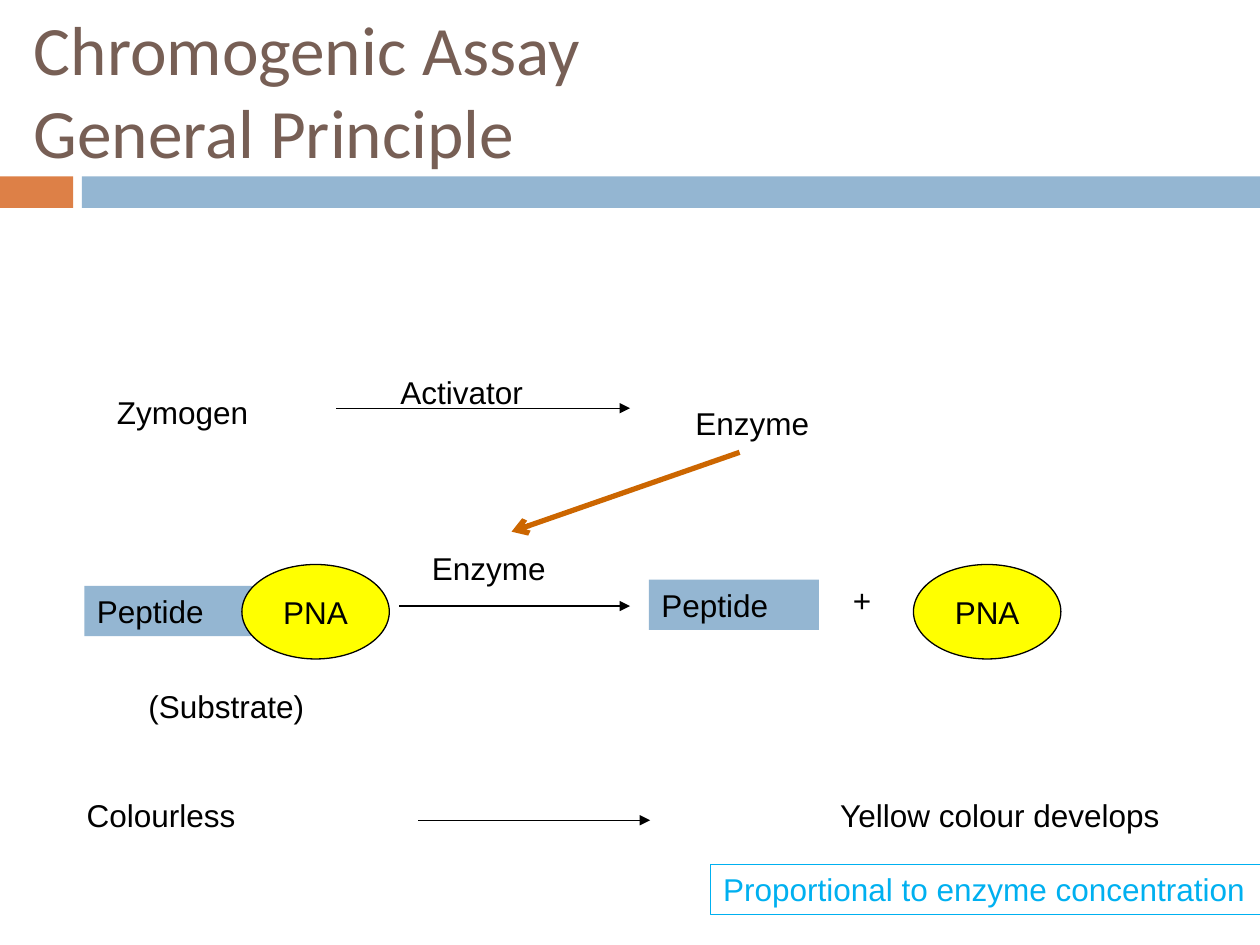
import pptx
import pptx.util
import pptx.dml.color
import pptx.enum.shapes
import pptx.enum.text
import pptx.oxml
import pptx.oxml.ns

Inches = pptx.util.Inches
Shape = pptx.enum.shapes.MSO_SHAPE
Anchor = pptx.enum.text.MSO_ANCHOR
Align = pptx.enum.text.PP_ALIGN

COLORS = {
    "black": "000000",
    "brown": "775F55",
    "orange": "DD8047",
    "blue": "94B6D2",
    "yellow": "FFFF00",
    "rust": "CC6600",
    "cyan": "00B0F0",
}


def color(name):
    return pptx.dml.color.RGBColor.from_string(COLORS[name])


def write(shape, text, hue="black", size=18, font="Arial", wrap=True,
          anchor=Anchor.TOP, align=Align.LEFT):
    frame = shape.text_frame
    frame.word_wrap = wrap
    frame.vertical_anchor = anchor
    para = frame.paragraphs[0]
    para.text = text
    para.alignment = align
    for run in para.runs:
        run.font.name = font
        run.font.size = pptx.util.Pt(size)
        run.font.color.rgb = color(hue)


def label(slide, text, left, top, width, height=0.4, **style):
    box = slide.shapes.add_textbox(
        Inches(left), Inches(top), Inches(width), Inches(height))
    write(box, text, **style)


def block(slide, kind, left, top, width, height, fill=None, line=None):
    shape = slide.shapes.add_shape(
        kind, Inches(left), Inches(top), Inches(width), Inches(height))
    shape.shadow.inherit = False
    if fill:
        shape.fill.solid()
        shape.fill.fore_color.rgb = color(fill)
    else:
        shape.fill.background()
    if line:
        shape.line.color.rgb = color(line)
        shape.line.width = pptx.util.Pt(0.75)
    else:
        shape.line.fill.background()
    return shape


def peptide(slide, left, top, width):
    shape = block(slide, Shape.RECTANGLE, left, top, width, 0.4, "blue")
    write(shape, "Peptide")


def marker(slide, left):
    shape = block(slide, Shape.OVAL, left, 4.48, 1.17, 0.75,
                  "yellow", "black")
    write(shape, "PNA", wrap=False, anchor=Anchor.MIDDLE,
          align=Align.CENTER)


def arrow(slide, start, end, hue="black", width=0.75, head="triangle"):
    line = slide.shapes.add_connector(
        pptx.enum.shapes.MSO_CONNECTOR.STRAIGHT,
        *(Inches(value) for value in start + end))
    line.line.color.rgb = color(hue)
    line.line.width = pptx.util.Pt(width)
    # Arrowhead, and no shadow
    tip = pptx.oxml.parse_xml(
        f'<a:tailEnd {pptx.oxml.ns.nsdecls("a")} type="{head}"/>')
    line.line._get_or_add_ln().append(tip)
    line._element.spPr.append(pptx.oxml.parse_xml(
        f'<a:effectLst {pptx.oxml.ns.nsdecls("a")}/>'))


def main():
    deck = pptx.Presentation()
    deck.slide_width, deck.slide_height = Inches(10), Inches(7.5)
    slide = deck.slides.add_slide(deck.slide_layouts[6])

    # Title and its band
    block(slide, Shape.RECTANGLE, 0, 1.4, 0.58, 0.25, "orange")
    block(slide, Shape.RECTANGLE, 0.65, 1.4, 9.35, 0.25, "blue")
    label(slide, "Chromogenic Assay\vGeneral Principle", 0.17, 0, 8.66, 1.42,
          hue="brown", size=39.6, font="Calibri", anchor=Anchor.MIDDLE)

    # Activation of the zymogen
    arrow(slide, (2.67, 3.24), (5, 3.24))
    label(slide, "Activator", 3.08, 2.91, 1.33)
    label(slide, "Zymogen", 0.83, 3.07, 1.75)
    label(slide, "Enzyme", 5.42, 3.16, 2.58)
    arrow(slide, (5.87, 3.59), (4.06, 4.22), "rust", 3, "arrow")

    # Cleavage of the substrate
    label(slide, "Enzyme", 3.33, 4.31, 1.17)
    arrow(slide, (3.17, 4.81), (5, 4.81))
    peptide(slide, 0.67, 4.65, 1.42)
    marker(slide, 1.92)
    label(slide, "(Substrate)", 1.08, 5.4, 1.67)
    peptide(slide, 5.15, 4.6, 1.35)
    label(slide, "+", 6.67, 4.56, 0.42)
    marker(slide, 7.25)

    # Colour change
    label(slide, "Colourless", 0.59, 6.27, 2.83)
    arrow(slide, (3.32, 6.51), (5.16, 6.51))
    label(slide, "Yellow colour develops", 6.57, 6.27, 2.83)
    note = block(slide, Shape.RECTANGLE, 5.64, 6.86, 4.38, 0.4, line="cyan")
    write(note, "Proportional to enzyme concentration", "cyan", wrap=False)

    deck.save("out.pptx")


if __name__ == "__main__":
    main()
